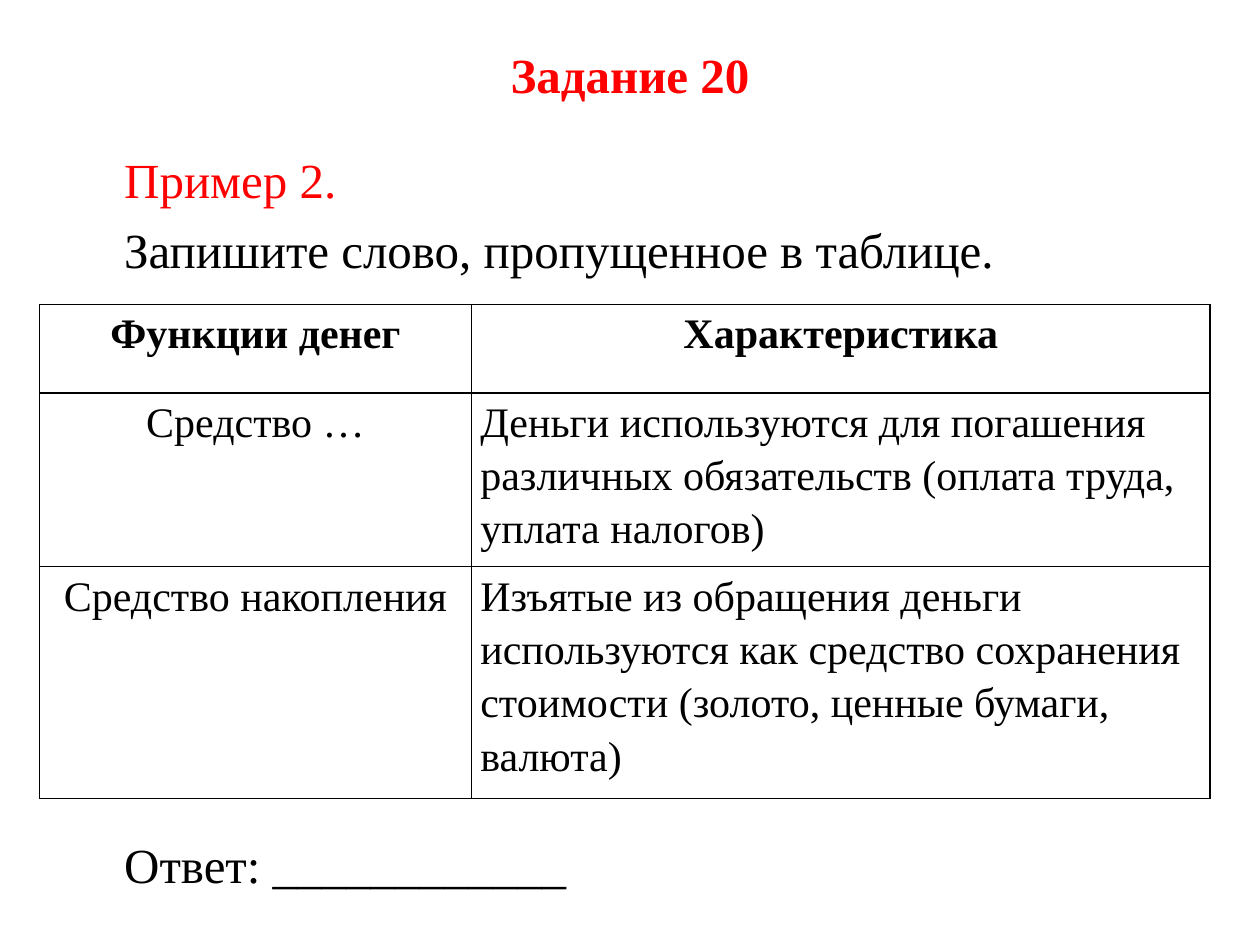
from lxml import etree
from pptx import Presentation
from pptx.dml.color import RGBColor
from pptx.enum.text import MSO_ANCHOR, PP_ALIGN
from pptx.oxml.ns import qn
from pptx.util import Pt

LEFT, CENTER = PP_ALIGN.LEFT, PP_ALIGN.CENTER
TOP, MIDDLE = MSO_ANCHOR.TOP, MSO_ANCHOR.MIDDLE
FONT = "Times New Roman"
RED, BLACK, WHITE = "FF0000", "000000", "FFFFFF"
COLUMN_WIDTHS = (247, 422)
ROW_HEIGHTS = (50.5, 92, 122)
TABLE_ROWS = (
    ("Функции денег", "Характеристика"),
    ("Средство …", "Деньги используются для погашения различных обязательств "
                   "(оплата труда, уплата налогов)"),
    ("Средство накопления", "Изъятые из обращения деньги используются как средство "
                            "сохранения стоимости (золото, ценные бумаги, валюта)"),
)


def color(value):
    """Turn a hex string into a colour."""
    return RGBColor.from_string(value)


def set_values(target, values):
    """Set the attributes of an object from a dict."""
    for name, value in values.items():
        setattr(target, name, value)


def write(paragraph, text, size, ink, bold=False, **layout):
    """Put one formatted run into a paragraph."""
    run = paragraph.add_run()
    run.text = text
    set_values(run.font, {"name": FONT, "size": Pt(size), "bold": bold})
    run.font.color.rgb = color(ink)
    set_values(paragraph, layout)


def add_text(slide, box, lines, anchor=TOP, alignment=LEFT, bold=False):
    """Add a text box with one paragraph per line of text and colour."""
    frame = slide.shapes.add_textbox(*map(Pt, box)).text_frame
    set_values(frame, {"word_wrap": True, "vertical_anchor": anchor,
                       "margin_left": 0, "margin_right": 0,
                       "margin_top": 0, "margin_bottom": 0})
    for index, (text, ink) in enumerate(lines):
        paragraph = frame.add_paragraph() if index else frame.paragraphs[0]
        write(paragraph, text, 28, ink, bold,
              alignment=alignment, space_after=Pt(6.6))


def add_borders(cell, ink, width):
    """Draw a solid line on each side of a cell."""
    properties = cell._tc.get_or_add_tcPr()
    for position, side in enumerate(("a:lnL", "a:lnR", "a:lnT", "a:lnB")):
        line = etree.Element(qn(side), w=str(Pt(width)))
        fill = etree.SubElement(line, qn("a:solidFill"))
        etree.SubElement(fill, qn("a:srgbClr"), val=ink)
        properties.insert(position, line)


def fill_cell(cell, text, is_header, alignment):
    """Write and format one table cell."""
    cell.fill.solid()
    cell.fill.fore_color.rgb = color(WHITE)
    add_borders(cell, BLACK, 1)
    layout = {"alignment": alignment}
    if not is_header:
        set_values(cell, {"margin_left": Pt(5), "margin_right": Pt(5),
                          "margin_top": 0, "margin_bottom": 0})
        layout["line_spacing"] = 1.15
    write(cell.text_frame.paragraphs[0], text, 24, BLACK, is_header, **layout)


def add_functions_table(slide, left, top):
    """Add the table of the functions of money."""
    shape = slide.shapes.add_table(
        len(ROW_HEIGHTS), len(COLUMN_WIDTHS), Pt(left), Pt(top),
        Pt(sum(COLUMN_WIDTHS)), Pt(sum(ROW_HEIGHTS)))
    table = shape.table
    for column, width in zip(table.columns, COLUMN_WIDTHS):
        column.width = Pt(width)
    for row_index, texts in enumerate(TABLE_ROWS):
        table.rows[row_index].height = Pt(ROW_HEIGHTS[row_index])
        for column_index, text in enumerate(texts):
            is_header = row_index == 0
            alignment = CENTER if is_header or column_index == 0 else LEFT
            fill_cell(table.cell(row_index, column_index), text, is_header, alignment)


def main():
    """Build the task slide and save it."""
    presentation = Presentation()
    set_values(presentation, {"slide_width": Pt(720), "slide_height": Pt(540)})
    slide = presentation.slides.add_slide(presentation.slide_layouts[6])
    add_text(slide, (36, 0, 648, 84), [("Задание 20", RED)], MIDDLE, CENTER, True)
    add_text(slide, (71, 85.5, 606, 72),
             [("Пример 2.", RED), ("Запишите слово, пропущенное в таблице.", BLACK)])
    add_functions_table(slide, 22.5, 174)
    add_text(slide, (71, 477, 606, 36), [("Ответ: ____________", BLACK)])
    presentation.save("out.pptx")


if __name__ == "__main__":
    main()
